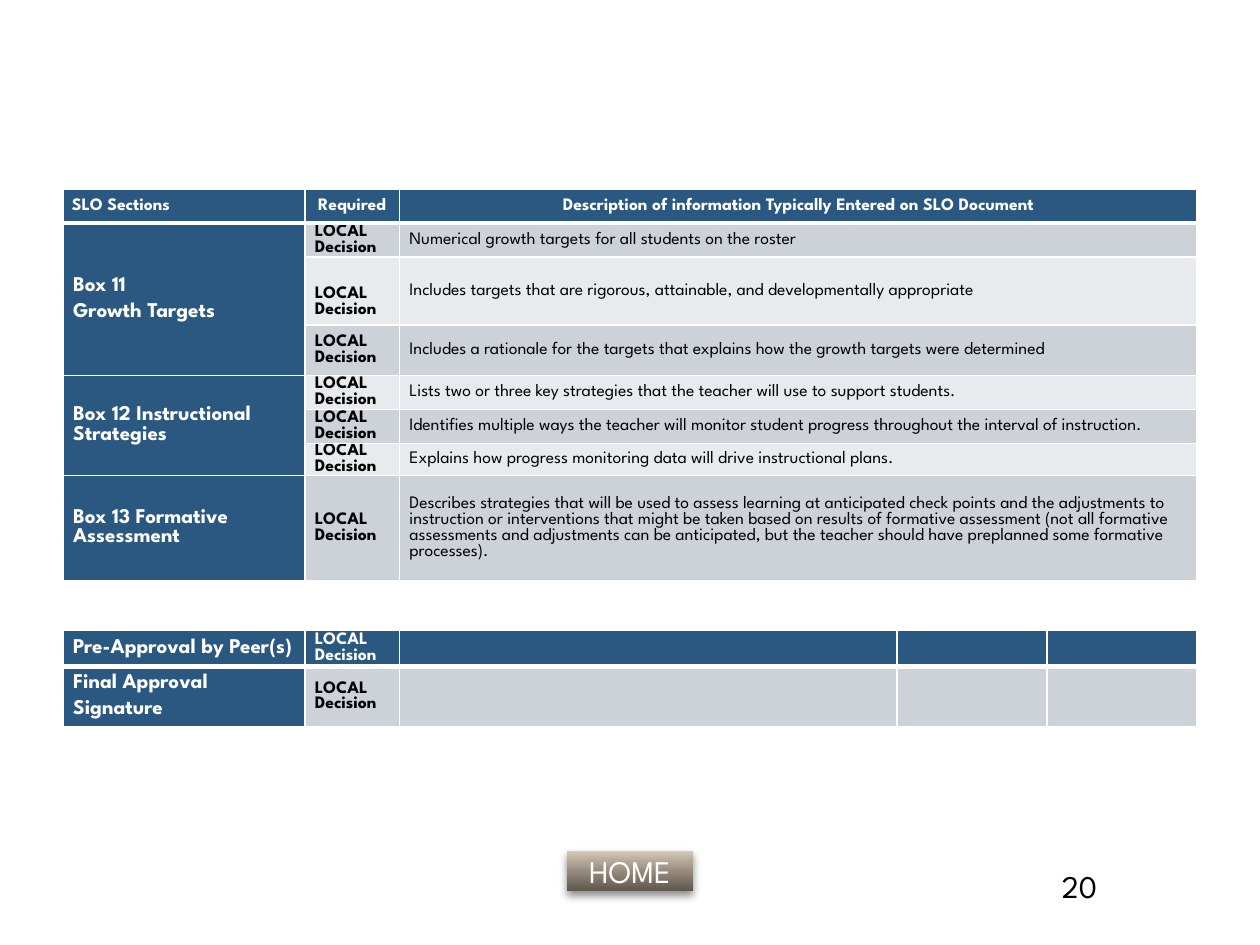
"""Build the slide of SLO sections, approvals and the home button."""
from lxml import etree
from pptx import Presentation
from pptx import util as u
from pptx.dml.color import RGBColor
from pptx.enum import shapes, text
from pptx.oxml.ns import qn

FONT = "League Spartan"
WHITE = RGBColor(0xFF, 0xFF, 0xFF)
BLACK = RGBColor(0, 0, 0)
BLUE = RGBColor(0x2B, 0x58, 0x80)
GRAY = RGBColor(0xCD, 0xD1, 0xD8)
PALE = RGBColor(0xE8, 0xEA, 0xED)
BUTTON_STOPS = [
    (0, RGBColor(0x5F, 0x57, 0x4E)),
    (50, RGBColor(0x98, 0x8C, 0x7E)),
    (70, RGBColor(0xB2, 0xA5, 0x96)),
    (100, RGBColor(0xD8, 0xCA, 0xB8)),
]
LOCAL = "LOCAL Decision"
HEADERS = ["SLO Sections", "Required", "Description of information Typically Entered on SLO Document"]
SECTIONS = [
    (["Box 11", "Growth Targets"], [
        "Numerical growth targets for all students on the roster",
        "Includes targets that are rigorous, attainable, and developmentally appropriate",
        "Includes a rationale for the targets that explains how the growth targets were determined",
    ]),
    (["Box 12 Instructional Strategies"], [
        "Lists two or three key strategies that the teacher will use to support students.",
        "Identifies multiple ways the teacher will monitor student progress throughout the interval of instruction.",
        "Explains how progress monitoring data will drive instructional plans.",
    ]),
    (["Box 13 Formative Assessment"], [
        "Describes strategies that will be used to assess learning at anticipated check points and the "
        "adjustments to instruction or interventions that might be taken based on results of formative "
        "assessment (not all formative assessments and adjustments can be anticipated, but the teacher "
        "should have preplanned some formative processes).",
    ]),
]
APPROVALS = [
    (["Pre-Approval by Peer(s)"], BLUE, WHITE, 3),
    (["Final Approval", "Signature"], GRAY, BLACK, 1),
]


def add_run(paragraph, content, size, color, bold=False):
    """Add one styled run to a paragraph."""
    run = paragraph.add_run()
    run.text = content
    run.font.name = FONT
    run.font.size = u.Pt(size)
    run.font.bold = bold
    run.font.color.rgb = color


def set_borders(cell, bottom):
    """Give a cell white borders, with the bottom one of the given width."""
    properties = cell._tc.get_or_add_tcPr()
    for index, (side, width) in enumerate([("L", 1), ("R", 1), ("T", 1), ("B", bottom)]):
        line = etree.Element(qn(f"a:ln{side}"), w=str(u.Pt(width)))
        fill = etree.SubElement(line, qn("a:solidFill"))
        etree.SubElement(fill, qn("a:srgbClr"), val=str(WHITE))
        properties.insert(index, line)


def fill_cell(cell, lines, fill, color, size=10, bold=True, align=None, margin=0.08, bottom=1):
    """Fill a cell and write its lines as paragraphs."""
    cell.fill.solid()
    cell.fill.fore_color.rgb = fill
    set_borders(cell, bottom)
    cell.vertical_anchor = text.MSO_ANCHOR.MIDDLE
    cell.margin_left = cell.margin_right = u.Inches(margin)
    cell.margin_top = cell.margin_bottom = 0
    frame = cell.text_frame
    frame.paragraphs[0].font.size = u.Pt(size)
    for index, line in enumerate(lines):
        paragraph = frame.add_paragraph() if index else frame.paragraphs[0]
        paragraph.alignment = align
        paragraph.space_after = u.Pt(2)
        if index:
            paragraph.space_before = u.Pt(2)
        add_run(paragraph, line, size, color, bold)


def add_grid(slide, top, widths, heights):
    """Add a table with the given column widths and row heights."""
    frame = slide.shapes.add_table(len(heights), len(widths), u.Inches(0.5), u.Inches(top),
                                   u.Inches(sum(widths)), u.Inches(sum(heights)))
    table = frame.table
    for column, width in zip(table.columns, widths):
        column.width = u.Inches(width)
    for row, height in zip(table.rows, heights):
        row.height = u.Inches(height)
    return table


def add_sections(slide):
    """Add the table of SLO sections."""
    table = add_grid(slide, 1.5, [1.92, 0.75, 6.33], [0.27, 0.27, 0.54, 0.4, 0.27, 0.27, 0.23, 0.84])
    for column, header in enumerate(HEADERS):
        align = text.PP_ALIGN.CENTER if column else text.PP_ALIGN.LEFT
        fill_cell(table.cell(0, column), [header], BLUE, WHITE, align=align, margin=0.07, bottom=3)
    row = 1
    for title, descriptions in SECTIONS:
        first = row
        for description in descriptions:
            band = GRAY if row % 2 else PALE
            fill_cell(table.cell(row, 0), title if row == first else [], BLUE, WHITE, size=12)
            fill_cell(table.cell(row, 1), [LOCAL], band, BLACK)
            fill_cell(table.cell(row, 2), [description], band, BLACK, bold=False)
            row += 1
        if row - first > 1:
            table.cell(first, 0).merge(table.cell(row - 1, 0))
    table.cell(2, 1).margin_top = u.Inches(0.18)


def add_approvals(slide):
    """Add the table of approvals."""
    table = add_grid(slide, 5, [1.92, 0.75, 3.95, 1.19, 1.19], [0.29, 0.48])
    for row, (title, fill, color, bottom) in enumerate(APPROVALS):
        fill_cell(table.cell(row, 0), title, BLUE, WHITE, size=12, bottom=bottom)
        fill_cell(table.cell(row, 1), [LOCAL], fill, color, bottom=bottom)
        for column in range(2, 5):
            fill_cell(table.cell(row, column), [], fill, color, bottom=bottom)


def add_button(slide):
    """Add the home button with its gradient and shadow."""
    shape = slide.shapes.add_shape(shapes.MSO_SHAPE.ACTION_BUTTON_CUSTOM, u.Inches(4.5), u.Inches(6.75),
                                   u.Inches(1), u.Inches(0.32))
    shape.fill.gradient()
    shape.line.fill.background()
    shape.shadow.inherit = False
    properties = shape._element.spPr
    gradient = properties.find(qn("a:gradFill"))
    for child in list(gradient):
        gradient.remove(child)
    stops = etree.SubElement(gradient, qn("a:gsLst"))
    for position, color in BUTTON_STOPS:
        stop = etree.SubElement(stops, qn("a:gs"), pos=str(position * 1000))
        etree.SubElement(stop, qn("a:srgbClr"), val=str(color))
    etree.SubElement(gradient, qn("a:lin"), ang=str(270 * 60000), scaled="0")
    shadow = etree.SubElement(properties.find(qn("a:effectLst")), qn("a:outerShdw"), blurRad=str(u.Pt(5)),
                              dist=str(u.Pt(3)), dir=str(90 * 60000), rotWithShape="0")
    tint = etree.SubElement(shadow, qn("a:srgbClr"), val=str(BLACK))
    etree.SubElement(tint, qn("a:alpha"), val="45000")
    frame = shape.text_frame
    frame.vertical_anchor = text.MSO_ANCHOR.MIDDLE
    frame.paragraphs[0].alignment = text.PP_ALIGN.CENTER
    add_run(frame.paragraphs[0], "HOME", 18, WHITE)


def add_page_number(slide):
    """Add the page number."""
    box = slide.shapes.add_textbox(u.Inches(8.33), u.Inches(6.83), u.Inches(1.17), u.Inches(0.52))
    box.text_frame.word_wrap = True
    add_run(box.text_frame.paragraphs[0], "20", 18, BLACK)


def main():
    """Build and save the presentation."""
    presentation = Presentation()
    presentation.slide_width = u.Inches(10)
    presentation.slide_height = u.Inches(7.5)
    slide = presentation.slides.add_slide(presentation.slide_layouts[6])
    add_button(slide)
    add_sections(slide)
    add_approvals(slide)
    add_page_number(slide)
    presentation.save("out.pptx")


if __name__ == "__main__":
    main()
